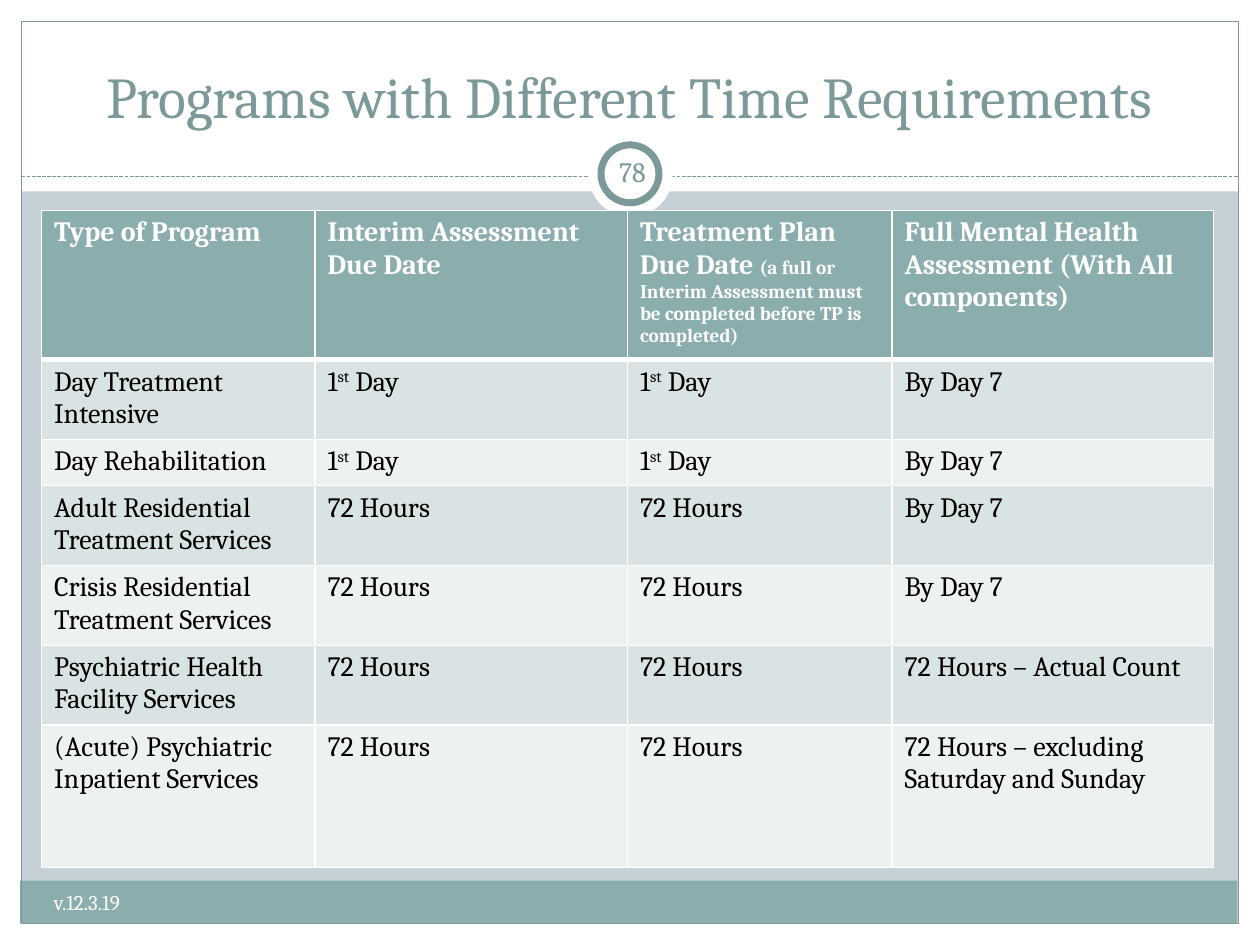
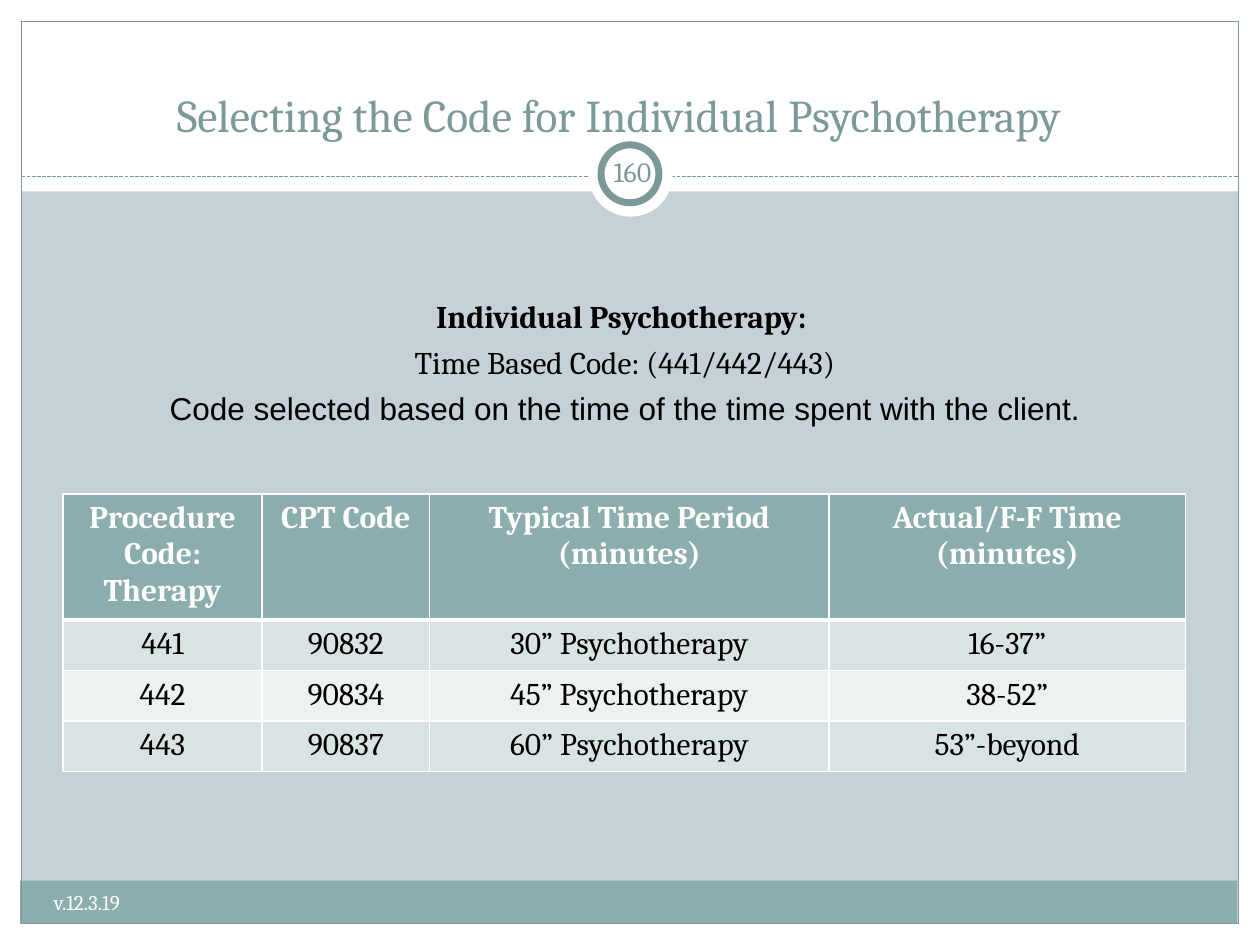
from dataclasses import dataclass

from lxml.etree import SubElement as Sub
from pptx import Presentation
from pptx.dml.color import RGBColor as Rgb
from pptx.enum.dml import MSO_LINE as Dash
from pptx.enum.shapes import MSO_CONNECTOR as Link, MSO_SHAPE as Form
from pptx.enum.text import MSO_ANCHOR as Anchor, PP_ALIGN as Align
from pptx.oxml import parse_xml as to_xml
from pptx.oxml.ns import nsdecls, qn
from pptx.util import Emu, Pt

SCALE = 9144
WIDE, HIGH = 1000, 750


@dataclass(frozen=True)
class Theme:
    back: str = "C5D1D7"
    white: str = "FFFFFF"
    black: str = "000000"
    band: str = "8CADAE"
    line: str = "7C999A"
    odd: str = "DAE3E3"
    even: str = "EEF1F2"
    serif: str = "Cambria"
    sans: str = "Arial"
    head: int = 33
    subhead: int = 26
    body: int = 18
    cell: int = 16
    foot: int = 12
    note: int = 11


def px(count):
    return Emu(count * SCALE)


class Deck:
    def __init__(self, theme):
        self.theme = theme
        self.file = Presentation()
        self.file.slide_width, self.file.slide_height = px(WIDE), px(HIGH)
        self.slide = None

    def page(self, title, box, size, number):
        look = self.theme
        self.slide = self.file.slides.add_slide(self.file.slide_layouts[6])
        fill = self.slide.background.fill
        fill.solid()
        fill.fore_color.rgb = Rgb.from_string(look.back)
        for edge in ((0, 733, WIDE, 17), (0, 0, WIDE, 152), (0, 0, 17, HIGH), (983, 0, 17, HIGH)):
            self.shape(edge, look.white)
        self.shape((16, 699, 966, 34), look.band)
        self.shape((17, 17, 966, 716), line=look.line)
        self.rule(17, 983, 140)
        self.shape((467, 105, 67, 67), look.white, form=Form.OVAL)
        self.shape((477, 115, 46, 46), look.white, look.line, 4, Form.OVAL)
        self.text(box, [[(title, {})]], size, look.line, Align.CENTER, Anchor.BOTTOM)
        self.text((33, 701, 392, 40), [[("v.12.3.19", {})]], look.foot, look.white)
        self.text((477, 112, 50, 48), [[(number, {})]], look.cell, look.line,
                  Align.CENTER, Anchor.MIDDLE, side=5)

    def shape(self, box, fill=None, line=None, width=0.75, form=Form.RECTANGLE):
        item = self.slide.shapes.add_shape(form, *map(px, box))
        item.shadow.inherit = False
        if fill:
            item.fill.solid()
            item.fill.fore_color.rgb = Rgb.from_string(fill)
        else:
            item.fill.background()
        if line:
            item.line.color.rgb = Rgb.from_string(line)
            item.line.width = Pt(width)
        else:
            item.line.fill.background()

    def rule(self, left, right, top):
        item = self.slide.shapes.add_connector(Link.STRAIGHT, px(left), px(top), px(right), px(top))
        item.line.color.rgb = Rgb.from_string(self.theme.line)
        item.line.width = Pt(0.75)
        item.line.dash_style = Dash.SQUARE_DOT
        Sub(item._element.spPr, qn("a:effectLst"))

    def text(self, box, paras, size, color, align=Align.LEFT, anchor=Anchor.TOP,
             side=10, top=5, gap=0):
        frame = self.slide.shapes.add_textbox(*map(px, box)).text_frame
        frame.word_wrap = True
        frame.vertical_anchor = anchor
        frame.margin_left = frame.margin_right = px(side)
        frame.margin_top, frame.margin_bottom = px(top), px(5)
        self.runs(frame, paras, size, color, align, gap=gap)

    def runs(self, frame, paras, size, color, align, bold=False, gap=0):
        for rank, parts in enumerate(paras):
            para = frame.add_paragraph() if rank else frame.paragraphs[0]
            para.alignment = align
            para.space_before = Pt(gap if rank else 0)
            for words, style in parts:
                run = para.add_run()
                run.text = words
                font = run.font
                font.name = style.get("font", self.theme.serif)
                font.size = Pt(style.get("size", size))
                font.bold = style.get("bold", bold)
                font.color.rgb = Rgb.from_string(color)
                if "raise" in style:
                    font._element.set("baseline", str(style["raise"] * 1000))

    def table(self, spot, cols, highs, rows, size, align=Align.LEFT):
        look = self.theme
        box = (*spot, sum(cols), sum(highs))
        grid = self.slide.shapes.add_table(len(rows), len(cols), *map(px, box)).table
        for col, wide in zip(grid.columns, cols):
            col.width = px(wide)
        for rank, (row, high) in enumerate(zip(rows, highs)):
            grid.rows[rank].height = px(high)
            head = rank == 0
            fill = look.band if head else look.odd if rank % 2 else look.even
            for place, words in enumerate(row):
                cell = grid.cell(rank, place)
                cell.fill.solid()
                cell.fill.fore_color.rgb = Rgb.from_string(fill)
                self.border(cell, 3 if rank == 1 else 1, 3 if head else 1)
                paras = words if isinstance(words, list) else [[(words, {})]]
                self.runs(cell.text_frame, paras, size,
                          look.white if head else look.black, align, head)

    def border(self, cell, top, bottom):
        props = cell._tc.get_or_add_tcPr()
        for rank, (side, width) in enumerate(zip("LRTB", (1, 1, top, bottom))):
            props.insert(rank, to_xml(
                f'<a:ln{side} {nsdecls("a")} w="{Pt(width)}"><a:solidFill>'
                f'<a:srgbClr val="{self.theme.white}"/></a:solidFill></a:ln{side}>'))


def times(deck):
    look = deck.theme
    deck.page("Programs with Different Time Requirements", (33, 25, 933, 83), look.head, "78")
    first = [[("1", {}), ("st", {"raise": 30}), (" Day", {})]]
    plan = [[("Treatment Plan Due Date ", {}),
             ("(a full or Interim Assessment must be completed before TP is completed)",
              {"size": look.note})]]
    hours, week = "72 Hours", "By Day 7"
    rows = [
        ("Type of Program", "Interim Assessment Due Date", plan,
         "Full Mental Health Assessment (With All components)"),
        ("Day Treatment Intensive", first, first, week),
        ("Day Rehabilitation", first, first, week),
        ("Adult Residential Treatment Services", hours, hours, week),
        ("Crisis Residential Treatment Services", hours, hours, week),
        ("Psychiatric Health Facility Services", hours, hours, "72 Hours – Actual Count"),
        ("(Acute) Psychiatric Inpatient Services", hours, hours,
         "72 Hours – excluding Saturday and Sunday"),
    ]
    deck.table((33, 167), (217, 248, 210, 255), (82, 61, 35, 61, 61, 61, 113), rows, look.cell)


def codes(deck):
    look = deck.theme
    deck.page("Selecting the Code for Individual Psychotherapy", (33, 42, 917, 75),
              look.subhead, "160")
    paras = [
        [("Individual Psychotherapy: ", {"bold": True})],
        [("Time Based Code: (441/442/443)", {})],
        [("Code selected based on the time of the time spent with the client.",
          {"font": look.sans})],
    ]
    deck.text((46, 158, 900, 508), paras, look.body, look.black, Align.CENTER, top=78, gap=4.5)
    rows = [
        ([[("Procedure Code:", {})], [("Therapy", {})]], "CPT Code",
         "Typical Time Period (minutes)", "Actual/F-F Time (minutes)"),
        ("441", "90832", "30” Psychotherapy", "16-37”"),
        ("442", "90834", "45” Psychotherapy", "38-52”"),
        ("443", "90837", "60” Psychotherapy", "53”-beyond"),
    ]
    deck.table((50, 392), (158, 133, 317, 283), (95, 38, 38, 38), rows, look.body, Align.CENTER)


def main():
    deck = Deck(Theme())
    times(deck)
    codes(deck)
    deck.file.save("out.pptx")


if __name__ == "__main__":
    main()
